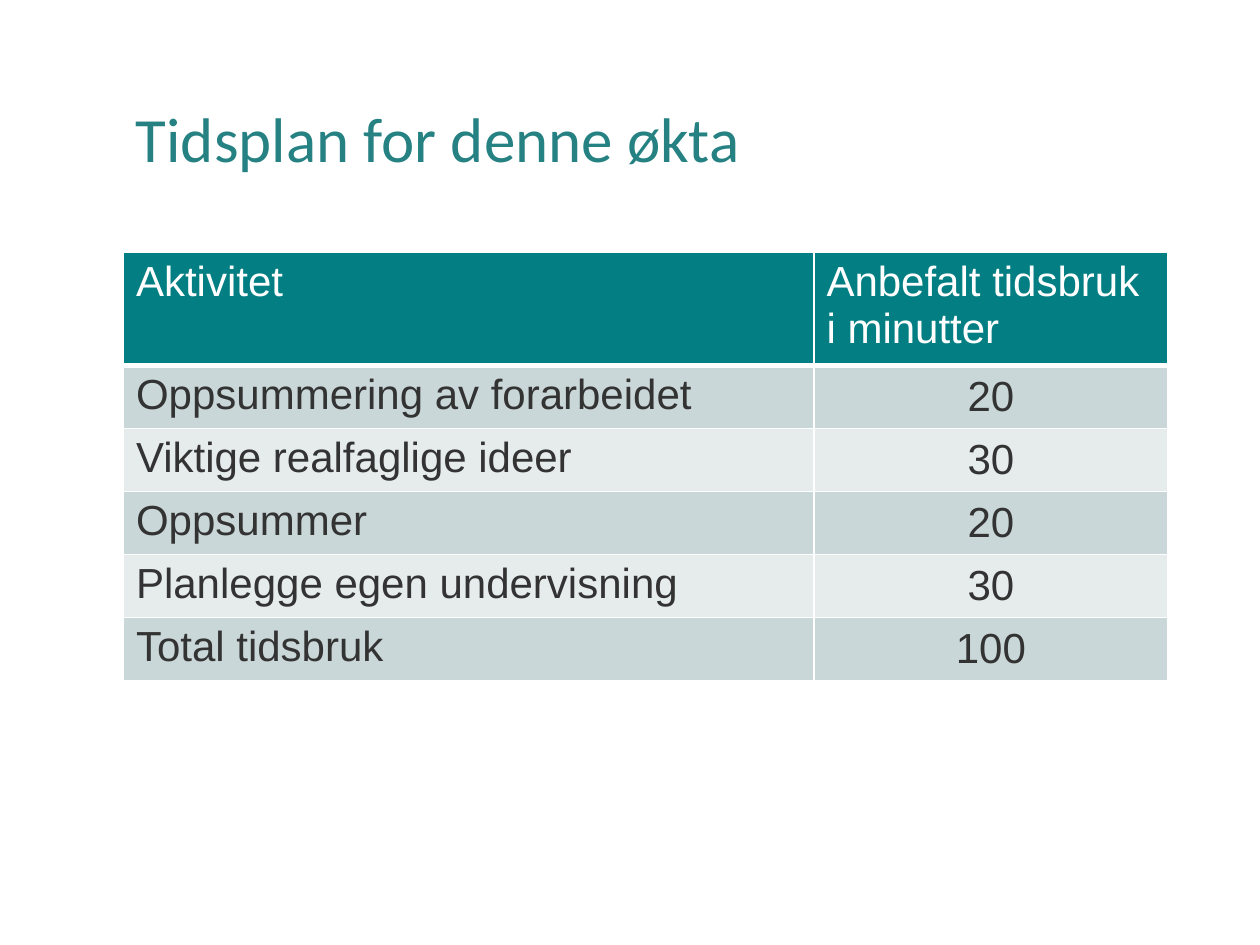
from lxml.etree import SubElement
from pptx import Presentation
from pptx.dml.color import RGBColor
from pptx.enum.text import MSO_ANCHOR as Anchor, PP_ALIGN as Align
from pptx.oxml.ns import qn
from pptx.util import Inches, Pt

TITLE_TEAL = RGBColor(0x26, 0x81, 0x83)
HEADER_TEAL = RGBColor(0x03, 0x7F, 0x83)
BAND_DARK = RGBColor(0xCA, 0xD7, 0xD8)
BAND_LIGHT = RGBColor(0xE6, 0xEC, 0xEC)
TEXT_GREY = RGBColor(0x33, 0x33, 0x33)
WHITE = RGBColor(0xFF, 0xFF, 0xFF)

SCHEDULE = [
    ("Aktivitet", "Anbefalt tidsbruk i minutter"),
    ("Oppsummering av forarbeidet", "20"),
    ("Viktige realfaglige ideer", "30"),
    ("Oppsummer", "20"),
    ("Planlegge egen undervisning", "30"),
    ("Total tidsbruk", "100"),
]
COLUMN_WIDTHS = (5.48, 2.81)
HEADER_HEIGHT, ROW_HEIGHT = 0.84, 0.47


def add_span(para, text, font, size, color):
    """Add one formatted run to a paragraph."""
    span = para.add_run()
    span.text = text
    span.font.name = font
    span.font.size = Pt(size)
    span.font.bold = False
    span.font.color.rgb = color


def add_title(page, left, top, width, height):
    """Place the slide title in the given box."""
    box = page.shapes.add_textbox(left, top, width, height)
    frame = box.text_frame
    frame.word_wrap = True
    frame.vertical_anchor = Anchor.MIDDLE
    para = frame.paragraphs[0]
    para.line_spacing = 0.9
    add_span(para, "Tidsplan for denne økta", "Calibri", 36, TITLE_TEAL)


def set_borders(cell, top_width, bottom_width):
    """Draw white lines around a cell, with widths in points."""
    properties = cell._tc.get_or_add_tcPr()
    widths = {"a:lnL": 1, "a:lnR": 1, "a:lnT": top_width, "a:lnB": bottom_width}
    for tag, width in widths.items():
        line = SubElement(properties, qn(tag), w=str(Pt(width)))
        fill = SubElement(line, qn("a:solidFill"))
        SubElement(fill, qn("a:srgbClr"), val=str(WHITE))


def fill_cell(cell, text, row, column):
    """Write and style a cell according to its place in the table."""
    header = row == 0
    set_borders(cell, 3 if row == 1 else 1, 3 if header else 1)
    cell.fill.solid()
    band = BAND_DARK if row % 2 else BAND_LIGHT
    cell.fill.fore_color.rgb = HEADER_TEAL if header else band
    para = cell.text_frame.paragraphs[0]
    if column == 1 and not header:
        cell.vertical_anchor = Anchor.MIDDLE
        para.alignment = Align.CENTER
    add_span(para, text, "Arial", 24, WHITE if header else TEXT_GREY)


def add_schedule(page, left, top, width, height):
    """Place the schedule table in the given box."""
    table = page.shapes.add_table(
        len(SCHEDULE), len(COLUMN_WIDTHS), left, top, width, height
    ).table
    table.horz_banding = False
    for column, column_width in zip(table.columns, COLUMN_WIDTHS):
        column.width = Inches(column_width)
    for row, texts in enumerate(SCHEDULE):
        table.rows[row].height = Inches(ROW_HEIGHT if row else HEADER_HEIGHT)
        for column, text in enumerate(texts):
            fill_cell(table.cell(row, column), text, row, column)


def main():
    """Build the slide and save the deck."""
    deck = Presentation()
    deck.slide_width, deck.slide_height = Inches(10), Inches(7.5)
    page = deck.slides.add_slide(deck.slide_layouts[6])
    left, width = Inches(0.98), Inches(sum(COLUMN_WIDTHS))
    table_height = Inches(HEADER_HEIGHT + ROW_HEIGHT * (len(SCHEDULE) - 1))
    add_title(page, left, Inches(0.4), width, Inches(1.45))
    add_schedule(page, left, Inches(2), width, table_height)
    deck.save("out.pptx")


if __name__ == "__main__":
    main()
